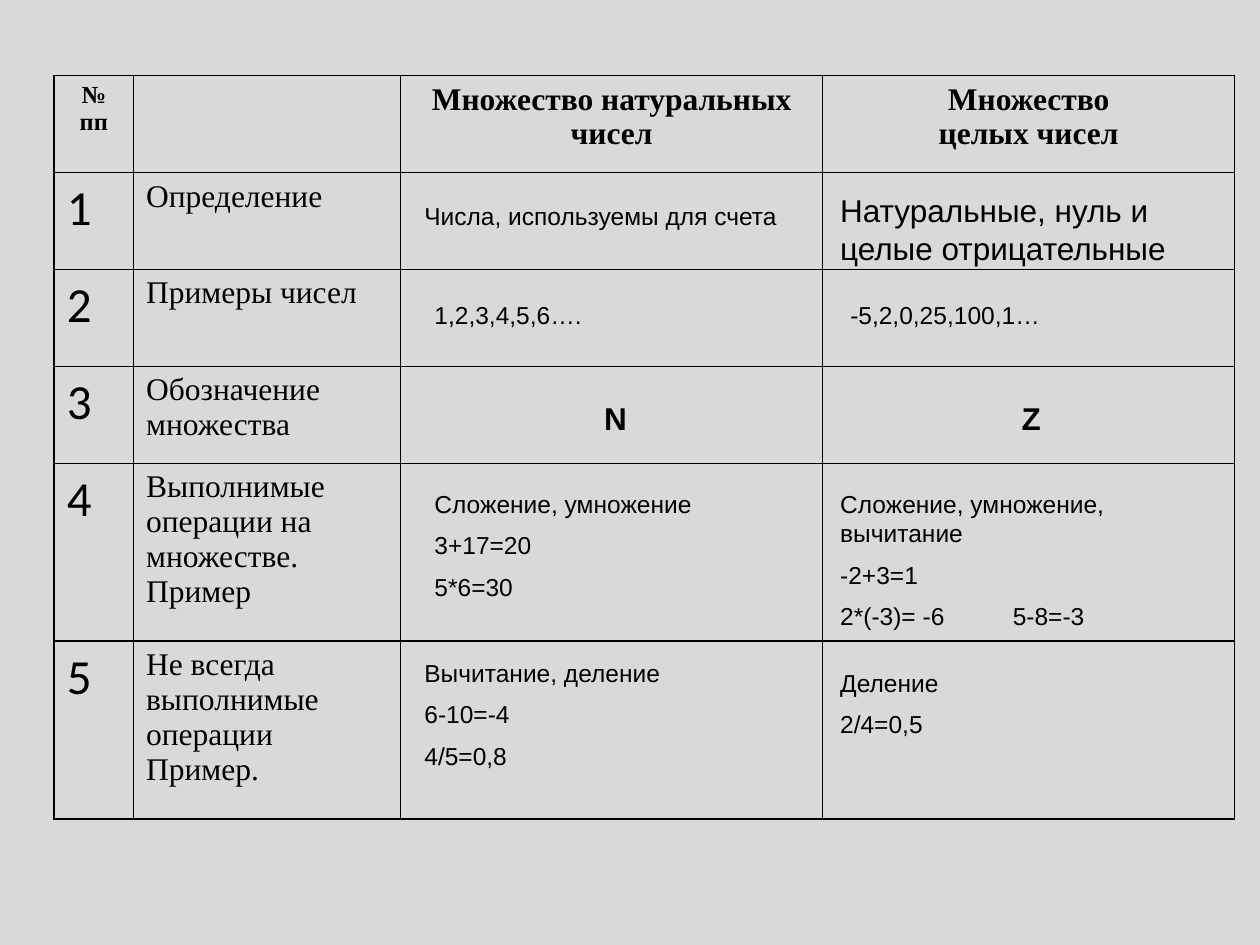
from lxml.etree import SubElement
from pptx import Presentation
from pptx.dml.color import RGBColor
from pptx.enum.text import MSO_AUTO_SIZE as AutoSize, PP_ALIGN as Align
from pptx.oxml.ns import qn
from pptx.util import Inches, Pt

INK = RGBColor(0x00, 0x00, 0x00)
PAPER = RGBColor(0xD9, 0xD9, 0xD9)
COLUMNS, ROWS = 100, 75


def write(frame, text, font="Arial", size=14, bold=False, align=Align.LEFT, gap=0, tab=None):
    for index, line in enumerate(text.split("\n")):
        para = frame.add_paragraph() if index else frame.paragraphs[0]
        if tab and "\t" in line:
            stops = SubElement(para._p.get_or_add_pPr(), qn("a:tabLst"))
            SubElement(stops, qn("a:tab"), pos=str(tab), algn="l")
        para.alignment = align
        para.space_before = Pt(gap if index else 0)
        span = para.add_run()
        span.text = line
        span.font.name = font
        span.font.size = Pt(size)
        span.font.bold = bold
        span.font.color.rgb = INK


class Page:
    def __init__(self, deck):
        self.slide = deck.slides.add_slide(deck.slide_layouts[6])
        self.column = deck.slide_width / COLUMNS
        self.row = deck.slide_height / ROWS
        fill = self.slide.background.fill
        fill.solid()
        fill.fore_color.rgb = PAPER

    def across(self, count):
        return round(count * self.column)

    def down(self, count):
        return round(count * self.row)

    def text(self, left, top, height, text, width=30.7, **style):
        box = self.slide.shapes.add_textbox(
            self.across(left), self.down(top), self.across(width), self.down(height))
        frame = box.text_frame
        frame.word_wrap = True
        frame.auto_size = AutoSize.SHAPE_TO_FIT_TEXT
        write(frame, text, gap=7, tab=self.across(13.7), **style)

    def border(self, cell):
        properties = cell._tc.get_or_add_tcPr()
        for side in ("a:lnL", "a:lnR", "a:lnT", "a:lnB"):
            line = SubElement(properties, qn(side), w=str(Pt(1)))
            fill = SubElement(line, qn("a:solidFill"))
            SubElement(fill, qn("a:srgbClr"), val=str(INK))

    def table(self, left, top, widths, heights):
        table = self.slide.shapes.add_table(
            len(heights), len(widths), self.across(left), self.down(top),
            self.across(sum(widths)), self.down(sum(heights))).table
        table.first_row = table.horz_banding = False
        for column, width in zip(table.columns, widths):
            column.width = self.across(width)
        for row, height in zip(table.rows, heights):
            row.height = self.down(height)
        for cell in table.iter_cells():
            self.border(cell)
            cell.fill.background()
        return table


def main():
    deck = Presentation()
    deck.slide_width, deck.slide_height = Inches(10), Inches(7.5)
    page = Page(deck)

    table = page.table(4.3, 6, [6.3, 21.2, 33.5, 32.7], [7.7] * 4 + [14.1] * 2)
    headings = [("№\nпп", 14), ("", 18), ("Множество натуральных чисел", 18),
                ("Множество\nцелых чисел", 18)]
    for column, (heading, size) in enumerate(headings):
        if heading:
            write(table.cell(0, column).text_frame, heading, font="Times New Roman",
                  size=size, bold=True, align=Align.CENTER)
    topics = ["Определение", "Примеры чисел", "Обозначение множества",
              "Выполнимые операции на множестве.\nПример",
              "Не всегда выполнимые операции\nПример."]
    for number, topic in enumerate(topics, 1):
        write(table.cell(number, 0).text_frame, str(number), font="Calibri", size=28)
        write(table.cell(number, 1).text_frame, topic, font="Times New Roman", size=18)

    natural, whole, indent = 32.7, 65.7, 0.8
    symbol = {"size": 18, "bold": True, "align": Align.CENTER}
    page.text(natural, 15.5, 3.3, "Числа, используемы для счета")
    page.text(whole, 14.7, 7, "Натуральные, нуль и целые отрицательные", size=18)
    page.text(natural + indent, 23.3, 3.3, "1,2,3,4,5,6….")
    page.text(whole + indent, 23.3, 3.3, "-5,2,0,25,100,1…")
    page.text(natural + indent, 31.2, 4, "N", **symbol)
    page.text(whole + indent, 31.2, 4, "Z", **symbol)
    page.text(natural + indent, 38.3, 10.3, "Сложение, умножение\n3+17=20\n5*6=30")
    page.text(whole, 38.3, 12.6,
              "Сложение, умножение, вычитание\n-2+3=1\n2*(-3)= -6\t5-8=-3")
    page.text(natural, 51.7, 10.3, "Вычитание, деление\n6-10=-4\n4/5=0,8")
    page.text(whole, 52.5, 6.8, "Деление\n2/4=0,5")

    deck.save("out.pptx")


if __name__ == "__main__":
    main()
